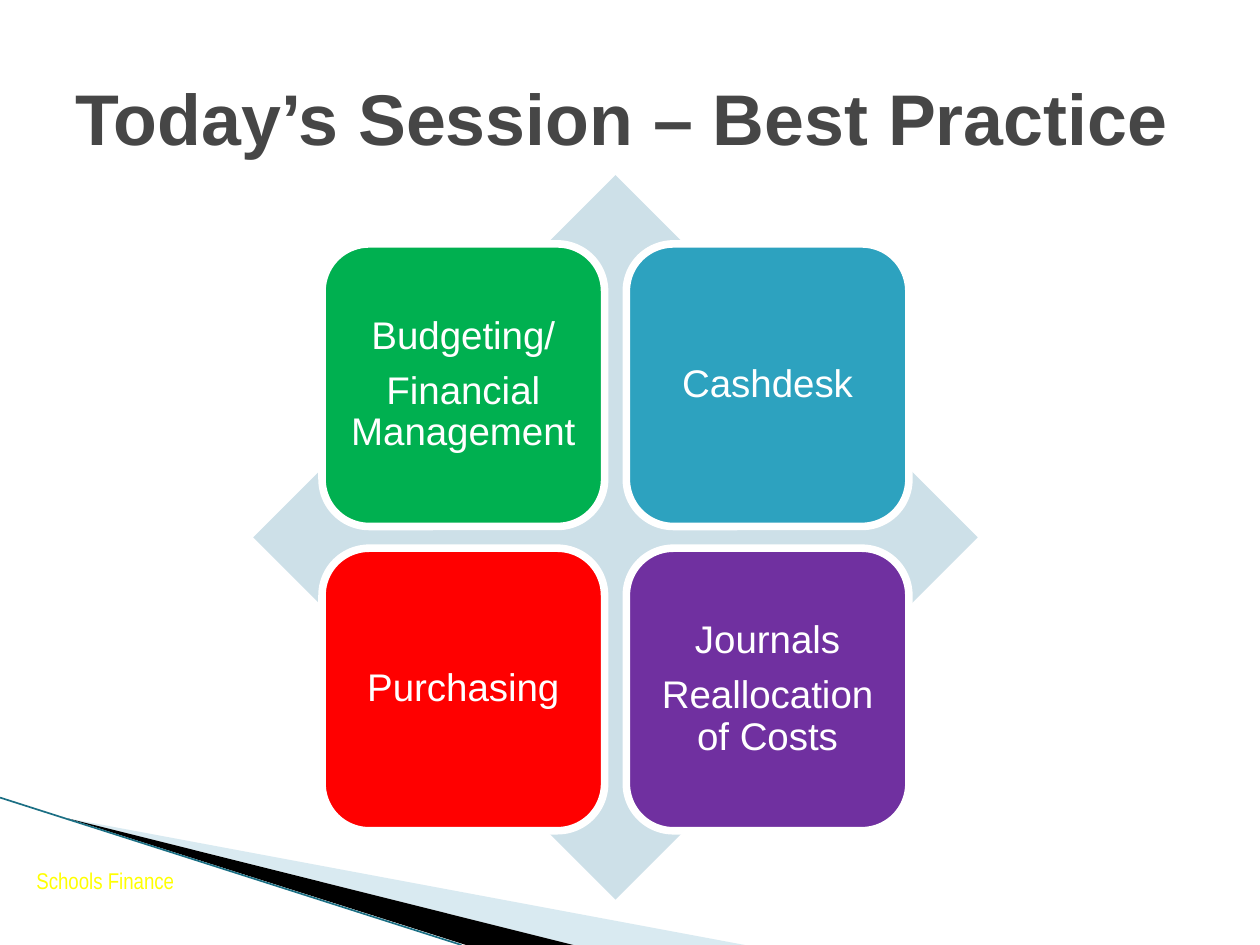
import pptx
import pptx.util
import pptx.dml.color
import pptx.enum.shapes
import pptx.enum.text
import pptx.oxml
import pptx.oxml.ns
import lxml.etree

Pt = pptx.util.Pt
Kind = pptx.enum.shapes.MSO_SHAPE
Align = pptx.enum.text.PP_ALIGN
Anchor = pptx.enum.text.MSO_ANCHOR
qn = pptx.oxml.ns.qn

HUES = {
    "pale": "A0CBDC", "black": "000000", "edge": "1B6F84",
    "note": "FFFF00", "title": "464646", "back": "CDE0E8",
    "white": "FFFFFF", "green": "00B050", "teal": "2DA2BF",
    "red": "FF0000", "plum": "7030A0",
}
COLS, ROWS = 40, 30
UNIT = pptx.util.Inches(10) // COLS
TILES = [
    ("green", "Budgeting/\nFinancial Management"),
    ("teal", "Cashdesk"),
    ("red", "Purchasing"),
    ("plum", "Journals\nReallocation of Costs"),
]


def grid(*cells):
    return [round(cell * UNIT) for cell in cells]


def hue(name):
    return pptx.dml.color.RGBColor.from_string(HUES[name])


def paint(shape, name):
    shape.shadow.inherit = False
    shape.fill.solid()
    shape.fill.fore_color.rgb = hue(name)
    shape.line.fill.background()


def style(frame, face, size, name, align, bold=False):
    for para in frame.paragraphs:
        para.alignment = align
        for run in para.runs:
            run.font.name = face
            run.font.size = Pt(size)
            run.font.bold = bold
            run.font.color.rgb = hue(name)


def label(slide, box, text, anchor, *look, **more):
    frame = slide.shapes.add_textbox(*grid(*box)).text_frame
    frame.word_wrap = True
    frame.vertical_anchor = anchor
    frame.text = text
    style(frame, *look, **more)


def wedge(slide, points, name, alpha=None):
    start, *rest = [grid(*point) for point in points]
    form = slide.shapes.build_freeform(*start)
    form.add_line_segments(rest, close=True)
    shape = form.convert_to_shape()
    paint(shape, name)
    if alpha:
        tint = shape.fill._xPr.find(".//" + qn("a:srgbClr"))
        lxml.etree.SubElement(tint, qn("a:alpha")).set("val", str(alpha * 1000))


def swoosh(slide, box):
    left, top, wide, high = box
    base = top + high
    tip = (left + 2.15, top + 0.66)
    wedge(slide, [tip, (left + wide, base), (left + 18.2, base)], "pale", 40)
    wedge(slide, [tip, (left + 18.2, base), (left + 14.8, base)], "black")
    line = slide.shapes.add_connector(
        pptx.enum.shapes.MSO_CONNECTOR.STRAIGHT,
        *grid(left, top, left + 14.65, base))
    line.line.color.rgb = hue("edge")
    line.line.width = Pt(0.95)
    lxml.etree.SubElement(line._element.spPr, qn("a:effectLst"))


def tile(slide, box, name, text):
    shape = slide.shapes.add_shape(Kind.ROUNDED_RECTANGLE, *grid(*box))
    paint(shape, name)
    shape.line.color.rgb = hue("white")
    shape.line.width = Pt(4.33)
    frame = shape.text_frame
    frame.word_wrap = True
    frame.vertical_anchor = Anchor.MIDDLE
    frame.margin_left = frame.margin_right = pptx.util.Inches(0.09)
    frame.margin_top = frame.margin_bottom = pptx.util.Inches(0.09)
    frame.text = text
    style(frame, "Arial", 22, "white", Align.CENTER)
    for para in frame.paragraphs:
        para.line_spacing = 0.9
        para.space_after = Pt(7.7)


def matrix(slide, box):
    left, top, side, _ = box
    back = slide.shapes.add_shape(Kind.DIAMOND, *grid(*box))
    paint(back, "back")
    size, edge, step = 0.39 * side, 0.095 * side, 0.42 * side
    for spot, (name, text) in enumerate(TILES):
        row, col = divmod(spot, 2)
        place = (left + edge + col * step, top + edge + row * step, size, size)
        tile(slide, place, name, text)


def main():
    deck = pptx.Presentation()
    deck.slide_width, deck.slide_height = grid(COLS, ROWS)
    slide = deck.slides.add_slide(deck.slide_layouts[6])
    swoosh(slide, (0, 25.32, 23.65, ROWS - 25.32))
    label(slide, (0, 27.32, 6.68, 1.28), "Schools Finance", Anchor.TOP,
          "Arial Narrow", 13, "note", Align.CENTER)
    label(slide, (2, 1.2, 36, 5), "Today’s Session – Best Practice",
          Anchor.MIDDLE, "Arial", 41, "title", Align.LEFT, bold=True)
    matrix(slide, (8.04, 5.56, 23, 23))
    deck.save("out.pptx")


if __name__ == "__main__":
    main()
